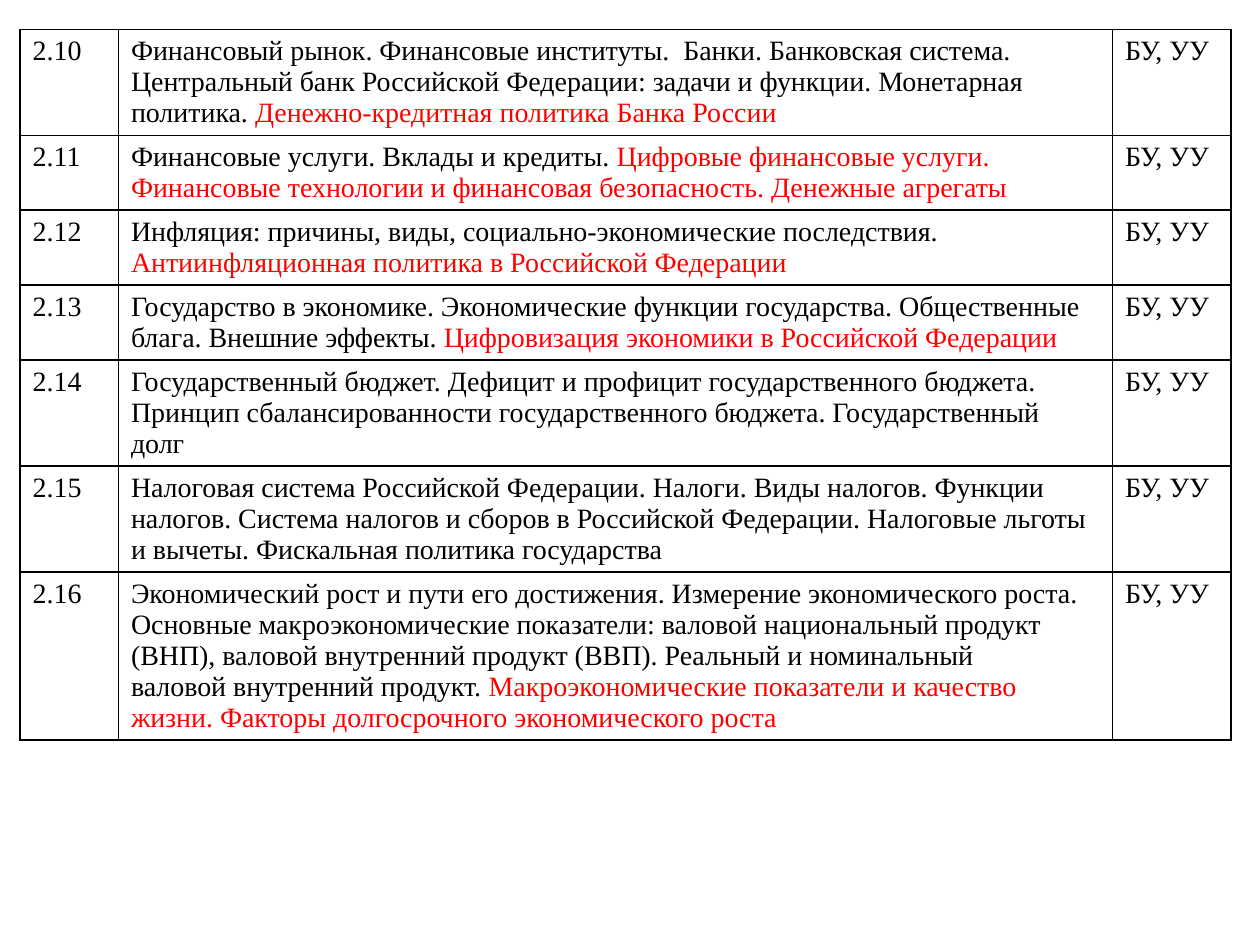
import pptx
import pptx.dml.color
import pptx.oxml
import pptx.oxml.ns
import pptx.util

COLORS = {"paper": "FFFFFF", "text": "000000", "new_topic": "FF0000", "border": "000000"}
FONT = "Times New Roman"
FONT_SIZE = 16
BORDER_WIDTH = 1
SLIDE_WIDTH = pptx.util.Inches(10)
SLIDE_HEIGHT = pptx.util.Inches(7.5)

# Shares of the slide: left, top, width, height
TABLE_BOX = (0.016, 0.031, 0.961, 0.804)
COLUMN_SHARES = (0.078, 0.789, 0.094)
ROW_SHARE = 0.055

FIRST_TOPIC = 10
LEVELS = "БУ, УУ"
# Each topic: paragraphs of established content, then the newly added content
TOPICS = [
    (["Финансовый рынок. Финансовые институты.  Банки. Банковская система.",
      "Центральный банк Российской Федерации: задачи и функции. Монетарная политика. "],
     "Денежно-кредитная политика Банка России"),
    (["Финансовые услуги. Вклады и кредиты. "],
     "Цифровые финансовые услуги. Финансовые технологии и финансовая безопасность. "
     "Денежные агрегаты"),
    (["Инфляция: причины, виды, социально-экономические последствия. "],
     "Антиинфляционная политика в Российской Федерации"),
    (["Государство в экономике. Экономические функции государства. Общественные блага. "
      "Внешние эффекты. "],
     "Цифровизация экономики в Российской Федерации"),
    (["Государственный бюджет. Дефицит и профицит государственного бюджета. Принцип "
      "сбалансированности государственного бюджета. Государственный долг"],
     ""),
    (["Налоговая система Российской Федерации. Налоги. Виды налогов. Функции налогов. "
      "Система налогов и сборов в Российской Федерации. Налоговые льготы и вычеты. "
      "Фискальная политика государства"],
     ""),
    (["Экономический рост и пути его достижения. Измерение экономического роста. Основные "
      "макроэкономические показатели: валовой национальный продукт (ВНП), валовой "
      "внутренний продукт (ВВП). Реальный и номинальный",
      "валовой внутренний продукт. "],
     "Макроэкономические показатели и качество жизни. Факторы долгосрочного "
     "экономического роста"),
]


def rgb(name):
    return pptx.dml.color.RGBColor.from_string(COLORS[name])


def add_run(paragraph, text, color="text"):
    run = paragraph.add_run()
    run.text = text
    run.font.name = FONT
    run.font.size = pptx.util.Pt(FONT_SIZE)
    run.font.color.rgb = rgb(color)


def add_borders(cell):
    """Draw a solid line on all four sides; lines must precede the cell fill."""
    properties = cell._tc.get_or_add_tcPr()
    namespace = pptx.oxml.ns.nsdecls("a")
    for position, side in enumerate(("lnL", "lnR", "lnT", "lnB")):
        line = pptx.oxml.parse_xml(
            f'<a:{side} {namespace} w="{pptx.util.Pt(BORDER_WIDTH)}"><a:solidFill>'
            f'<a:srgbClr val="{COLORS["border"]}"/></a:solidFill></a:{side}>')
        properties.insert(position, line)


def fill_cell(cell, paragraphs, new_content=""):
    cell.fill.solid()
    cell.fill.fore_color.rgb = rgb("paper")
    add_borders(cell)
    for index, text in enumerate(paragraphs):
        frame = cell.text_frame
        paragraph = frame.add_paragraph() if index else frame.paragraphs[0]
        add_run(paragraph, text)
    if new_content:
        add_run(paragraph, new_content, "new_topic")


def add_topic_table(slide, box):
    """Place the table of topics; rows grow from a common minimum height."""
    left, top, width, height = box
    frame_height = int(SLIDE_HEIGHT * height)
    shape = slide.shapes.add_table(
        len(TOPICS), len(COLUMN_SHARES), int(SLIDE_WIDTH * left), int(SLIDE_HEIGHT * top),
        int(SLIDE_WIDTH * width), frame_height)
    table = shape.table
    table.first_row = table.horz_banding = False
    for column, share in zip(table.columns, COLUMN_SHARES):
        column.width = int(SLIDE_WIDTH * share)
    for index, (paragraphs, new_content) in enumerate(TOPICS):
        row = table.rows[index]
        row.height = int(SLIDE_HEIGHT * ROW_SHARE)
        number, content, levels = row.cells
        fill_cell(number, [f"2.{FIRST_TOPIC + index}"])
        fill_cell(content, paragraphs, new_content)
        fill_cell(levels, [LEVELS])
    shape.height = frame_height


def main():
    presentation = pptx.Presentation()
    presentation.slide_width = SLIDE_WIDTH
    presentation.slide_height = SLIDE_HEIGHT
    slide = presentation.slides.add_slide(presentation.slide_layouts[6])
    add_topic_table(slide, TABLE_BOX)
    presentation.save("out.pptx")


if __name__ == "__main__":
    main()
